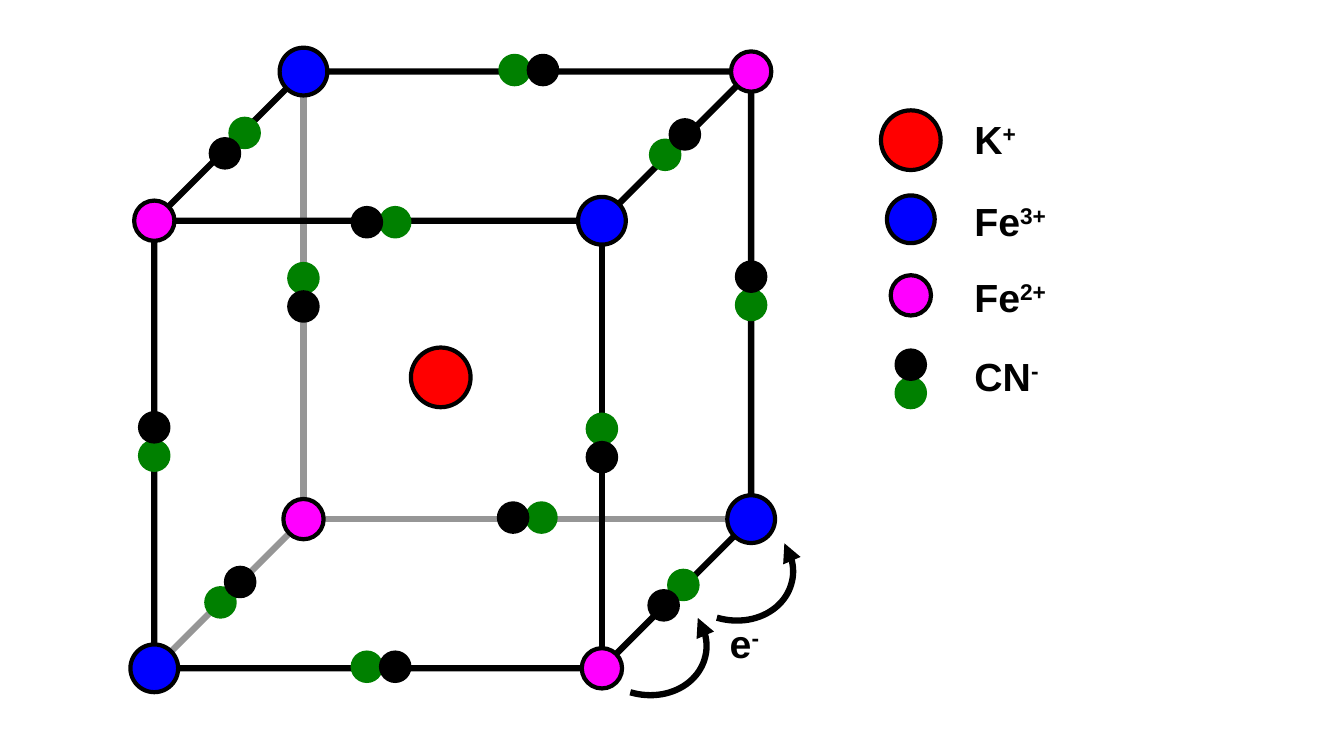
import math
from dataclasses import dataclass

from lxml import etree
from pptx import Presentation
from pptx import util as u
from pptx.dml.color import RGBColor
from pptx.enum import shapes, text
from pptx.oxml import ns


@dataclass(frozen=True)
class Theme:
    ink: str = "000000"
    hidden_edge: str = "969696"
    potassium: str = "FF0000"
    ferric: str = "0000FF"
    ferrous: str = "FF00FF"
    nitrogen: str = "008000"
    font: str = "Arial"
    label_size: int = 28
    edge_width: float = 4.5
    rim_width: float = 3


THEME = Theme()

# A cell is a quarter of the cube's width; column 0, row 0 is the cube's top left.
LEFT, TOP, CELL = 1.53, 0.71, 1.48

# Ion: colour and diameter in cells
POTASSIUM = (THEME.potassium, 0.4)
FERRIC = (THEME.ferric, 0.32)
FERROUS = (THEME.ferrous, 0.27)
ATOM_SIZE = 0.19

FERRIC_CORNERS = [(1, 0), (3, 1), (0, 4), (4, 3)]
FERROUS_CORNERS = [(4, 0), (0, 1), (1, 3), (3, 4)]
HIDDEN_CORNER = (1, 3)
HIDDEN_ENDS = [(1, 0), (0, 4), (4, 3)]

# Direction from nitrogen to carbon, in degrees clockwise from the right
RIGHT, DOWN, LEFTWARD, UP = 0, 90, 180, 270
DOWN_LEFT, UP_RIGHT = 134, 314
CYANIDES = [
    (0.54, 0.48, DOWN_LEFT), (3.48, 3.51, DOWN_LEFT),
    (3.49, 0.49, UP_RIGHT), (0.51, 3.49, UP_RIGHT),
    (1.52, 3.99, RIGHT), (2.51, -0.01, RIGHT),
    (1.52, 1.01, LEFTWARD), (2.5, 2.99, LEFTWARD),
    (4, 1.47, UP), (0, 2.48, UP),
    (1, 1.48, DOWN), (3, 2.49, DOWN),
]

LEGEND_COL, LABEL_COL = 5.07, 5.43
LEGEND_IONS = [(POTASSIUM, 0.46), (FERRIC, 0.99), (FERROUS, 1.5)]
LEGEND_CYANIDE_ROW = 2.06
LEGEND_LABELS = [("K", "+", 0.26), ("Fe", "3+", 0.81),
                 ("Fe", "2+", 1.32), ("CN", "-", 1.85)]
ELECTRON_HOPS = [(3.29, 3.82), (3.87, 3.32)]


def span(cells):
    return u.Inches(cells * CELL)


def at(col, row):
    return u.Inches(LEFT + col * CELL), u.Inches(TOP + row * CELL)


def style_line(line, color, width):
    line.color.rgb = RGBColor.from_string(color)
    line.width = u.Pt(width)


def add_centred(parent, preset, col, row, width, height):
    """Add an unfilled, unshadowed preset shape centred on a grid point."""
    shape = parent.add_shape(preset, *at(col - width / 2, row - height / 2),
                             span(width), span(height))
    shape.shadow.inherit = False
    shape.fill.background()
    return shape


def add_ball(parent, col, row, size, color, rim):
    ball = add_centred(parent, shapes.MSO_SHAPE.OVAL, col, row, size, size)
    ball.fill.solid()
    ball.fill.fore_color.rgb = RGBColor.from_string(color)
    style_line(ball.line, rim, THEME.rim_width)


def add_ion(parent, col, row, ion):
    color, size = ion
    add_ball(parent, col, row, size, color, THEME.ink)


def add_cyanide(parent, col, row, angle):
    """Add a nitrogen and a carbon that touch at a grid point."""
    pair = parent.add_group_shape().shapes
    for color, side in ((THEME.nitrogen, -0.5), (THEME.ink, 0.5)):
        reach = side * ATOM_SIZE
        add_ball(pair, col + reach * math.cos(math.radians(angle)),
                 row + reach * math.sin(math.radians(angle)),
                 ATOM_SIZE, color, color)


def add_hidden_edge(parent, start, end):
    edge = parent.add_connector(shapes.MSO_CONNECTOR.STRAIGHT,
                                *at(*start), *at(*end))
    style_line(edge.line, THEME.hidden_edge, THEME.edge_width)
    etree.SubElement(edge._element.spPr, ns.qn("a:effectLst"))


def add_cube(parent):
    cube = add_centred(parent, shapes.MSO_SHAPE.CUBE, 2, 2, 4, 4)
    style_line(cube.line, THEME.ink, THEME.edge_width)


def add_electron_hop(parent, col, row):
    hop = add_centred(parent, shapes.MSO_SHAPE.ARC, col, row, 0.71, 0.83)
    hop.adjustments[0] = 137.68
    hop.adjustments[1] = 0
    hop.rotation = 106.4
    style_line(hop.line, THEME.ink, THEME.edge_width)
    outline = hop.line._get_or_add_ln()
    etree.SubElement(outline, ns.qn("a:headEnd"), type="triangle")


def add_label(parent, col, row, symbol, charge, width=0.84):
    label = parent.add_textbox(*at(col, row), span(width), span(0.39))
    frame = label.text_frame
    frame.word_wrap = True
    frame.auto_size = text.MSO_AUTO_SIZE.SHAPE_TO_FIT_TEXT
    paragraph = frame.paragraphs[0]
    for part in (symbol, charge):
        run = paragraph.add_run()
        run.text = part
        run.font.name = THEME.font
        run.font.size = u.Pt(THEME.label_size)
        run.font.bold = True
        run.font.color.rgb = RGBColor.from_string(THEME.ink)
    run._r.get_or_add_rPr().set("baseline", "30000")


def add_unit_cell(parent):
    for end in HIDDEN_ENDS:
        add_hidden_edge(parent, HIDDEN_CORNER, end)
    add_cube(parent)
    for ion, corners in ((FERROUS, FERROUS_CORNERS), (FERRIC, FERRIC_CORNERS)):
        for col, row in corners:
            add_ion(parent, col, row, ion)
    add_ion(parent, 1.92, 2.05, POTASSIUM)
    for col, row, angle in CYANIDES:
        add_cyanide(parent, col, row, angle)


def add_legend(parent):
    for ion, row in LEGEND_IONS:
        add_ion(parent, LEGEND_COL, row, ion)
    add_cyanide(parent, LEGEND_COL, LEGEND_CYANIDE_ROW, UP)
    for symbol, charge, row in LEGEND_LABELS:
        add_label(parent, LABEL_COL, row, symbol, charge)


def main():
    deck = Presentation()
    deck.slide_width, deck.slide_height = u.Inches(13.33), u.Inches(7.5)
    canvas = deck.slides.add_slide(deck.slide_layouts[6]).shapes
    add_unit_cell(canvas)
    add_legend(canvas)
    for col, row in ELECTRON_HOPS:
        add_electron_hop(canvas, col, row)
    add_label(canvas, 3.79, 3.64, "e", "-", width=0.45)
    deck.save("out.pptx")


if __name__ == "__main__":
    main()
